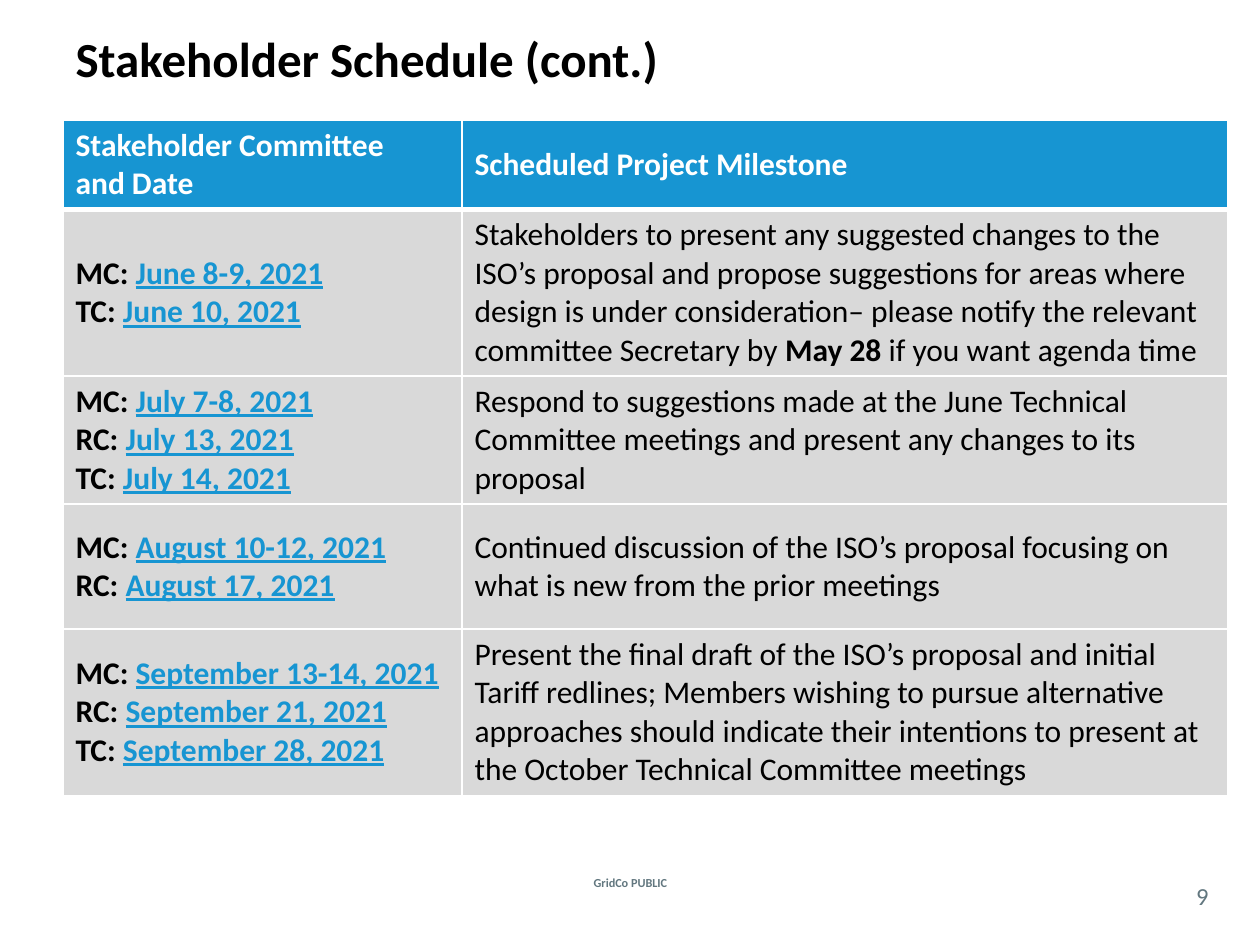
from lxml import etree
from pptx import Presentation
from pptx import util as u
from pptx.dml.color import RGBColor
from pptx.enum import text
from pptx.oxml.ns import qn

PX = 914400 // 126
BLACK, WHITE, BLUE, GREY, SLATE = "000000", "FFFFFF", "1795D2", "D9D9D9", "62777F"

# Content: committee dates, then milestone as (words, bold) runs
TITLE = "Stakeholder Schedule (cont.)"
HEADINGS = [["Stakeholder Committee", "and Date"], ["Scheduled Project Milestone"]]
SCHEDULE = [
    ([("MC: ", "June 8-9, 2021"), ("TC: ", "June 10, 2021")],
     [("Stakeholders to present any suggested changes to the ISO’s proposal and propose "
       "suggestions for areas where design is under consideration– please notify the "
       "relevant committee Secretary by ", False),
      ("May 28", True), (" if you want agenda time", False)]),
    ([("MC: ", "July 7-8, 2021"), ("RC: ", "July 13, 2021"), ("TC: ", "July 14, 2021")],
     [("Respond to suggestions made at the June Technical Committee meetings and present "
       "any changes to its proposal", False)]),
    ([("MC: ", "August 10-12, 2021"), ("RC: ", "August 17, 2021")],
     [("Continued discussion of the ISO’s proposal focusing on what is new from the prior "
       "meetings", False)]),
    ([("MC: ", "September 13-14, 2021"), ("RC: ", "September 21, 2021"),
      ("TC: ", "September 28, 2021")],
     [("Present the final draft of the ISO’s proposal and initial Tariff redlines; Members "
       "wishing to pursue alternative approaches should indicate their intentions to "
       "present at the October Technical Committee meetings", False)]),
]
# Labels: words, box in px, inset in px, format
LABELS = [
    ("GridCo PUBLIC", (538, 872, 185, 21), 0, dict(size=u.Pt(7), bold=True)),
    ("9", (1176, 877, 53, 37), 0, dict(size=u.Pt(14))),
]
TABLE_LEFT, TABLE_TOP = 63, 120
COLUMNS = [399, 766]
ROWS = [87, 161, 125, 125, 161]


def rgb(value):
    return RGBColor.from_string(value)


def emu(*lengths):
    return [length * PX for length in lengths]


def add_run(paragraph, words, colour, **formats):
    run = paragraph.add_run()
    run.text = words
    run.font.name = "Calibri"
    run.font.color.rgb = rgb(colour)
    for name, value in formats.items():
        setattr(run.font, name, value)


def place(shape, box):
    for name, value in zip(("left", "top", "width", "height"), emu(*box)):
        setattr(shape, name, value)


def fill_cell(cell, paragraphs, fill, bottom=1):
    """Each paragraph is a list of (words, colour, formats)."""
    cell.fill.solid()
    cell.fill.fore_color.rgb = rgb(fill)
    cell.vertical_anchor = text.MSO_ANCHOR.MIDDLE
    frame = cell.text_frame
    for index, runs in enumerate(paragraphs):
        paragraph = frame.add_paragraph() if index else frame.paragraphs[0]
        for words, colour, formats in runs:
            add_run(paragraph, words, colour, size=u.Pt(18), **formats)
    # Borders come before the fill in the cell properties
    properties = cell._tc.get_or_add_tcPr()
    for index, (side, points) in enumerate((("L", 1), ("R", 1), ("T", 1), ("B", bottom))):
        line = etree.Element(qn(f"a:ln{side}"), w=str(u.Pt(points)))
        solid = etree.SubElement(line, qn("a:solidFill"))
        etree.SubElement(solid, qn("a:srgbClr"), val=WHITE)
        properties.insert(index, line)


def main():
    presentation = Presentation()
    presentation.slide_width, presentation.slide_height = emu(1260, 945)
    slide = presentation.slides.add_slide(presentation.slide_layouts[5])

    # Title
    title = slide.shapes.title
    place(title, (63, 21, 1134, 73))
    frame = title.text_frame
    frame.auto_size = text.MSO_AUTO_SIZE.NONE
    frame.vertical_anchor = text.MSO_ANCHOR.MIDDLE
    frame.paragraphs[0].alignment = text.PP_ALIGN.LEFT
    add_run(frame.paragraphs[0], TITLE, BLACK, size=u.Pt(28), bold=True)

    # Schedule table
    box = emu(TABLE_LEFT, TABLE_TOP, sum(COLUMNS), sum(ROWS))
    table = slide.shapes.add_table(len(ROWS), len(COLUMNS), *box).table
    for column, width in zip(table.columns, emu(*COLUMNS)):
        column.width = width
    for row, height in zip(table.rows, emu(*ROWS)):
        row.height = height
    for column, lines in enumerate(HEADINGS):
        heading = [[(line, WHITE, dict(bold=True))] for line in lines]
        fill_cell(table.cell(0, column), heading, BLUE, bottom=3)
    for row, (dates, milestone) in enumerate(SCHEDULE, 1):
        meetings = [[(committee, BLACK, dict(bold=True)),
                     (date, BLUE, dict(bold=True, underline=True))]
                    for committee, date in dates]
        fill_cell(table.cell(row, 0), meetings, GREY)
        details = [(words, BLACK, dict(bold=bold)) for words, bold in milestone]
        fill_cell(table.cell(row, 1), [details], GREY)
        for column in (0, 1) if row == 1 else ():
            table.cell(row, column)._tc.tcPr.find(qn("a:lnT")).set("w", str(u.Pt(3)))

    # Footer and page number
    for words, label_box, inset, formats in LABELS:
        frame = slide.shapes.add_textbox(*emu(*label_box)).text_frame
        frame.word_wrap = True
        frame.vertical_anchor = text.MSO_ANCHOR.MIDDLE
        for side in ("left", "top", "right", "bottom"):
            setattr(frame, f"margin_{side}", inset * PX)
        frame.paragraphs[0].alignment = text.PP_ALIGN.CENTER
        add_run(frame.paragraphs[0], words, SLATE, **formats)

    presentation.save("out.pptx")


if __name__ == "__main__":
    main()
